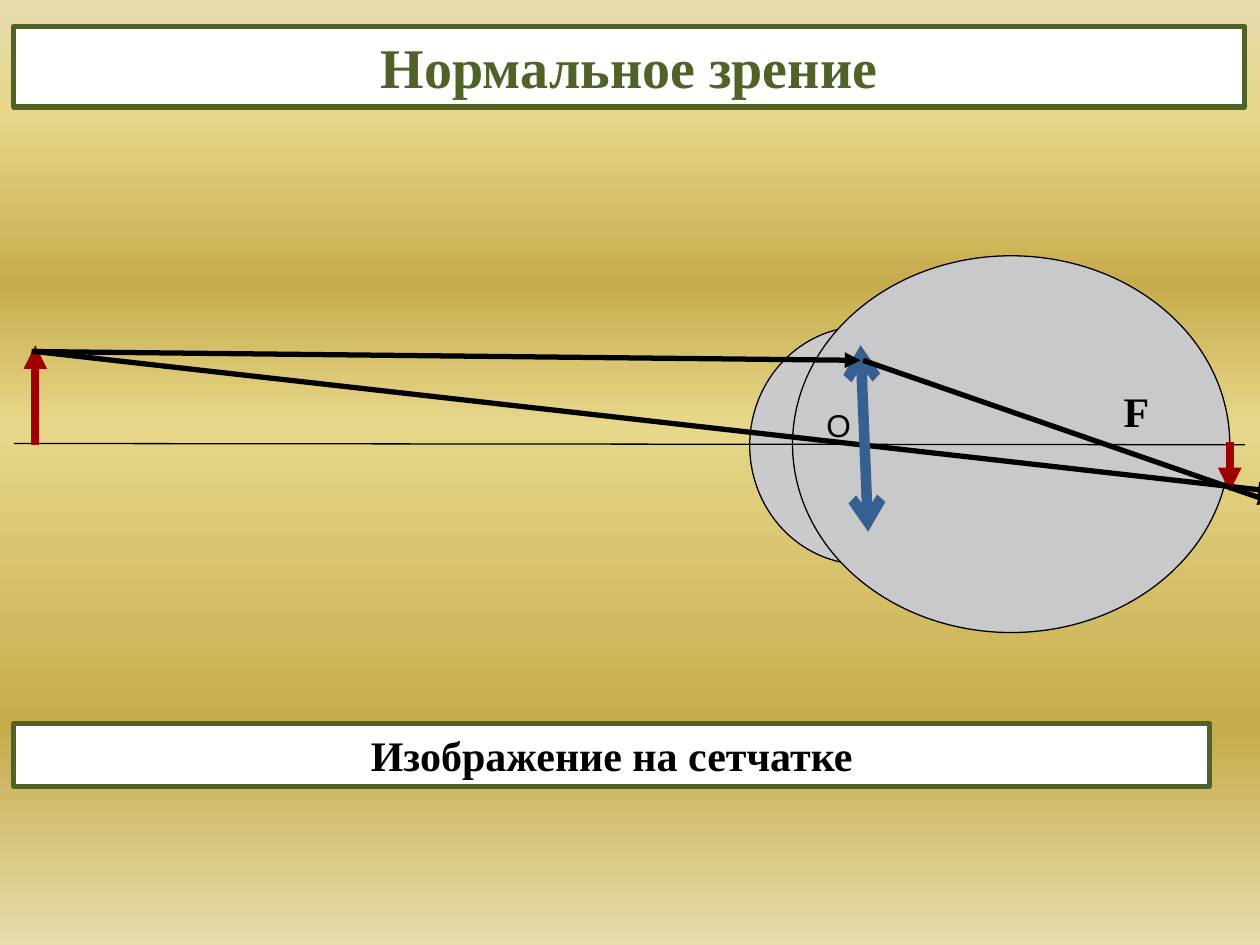
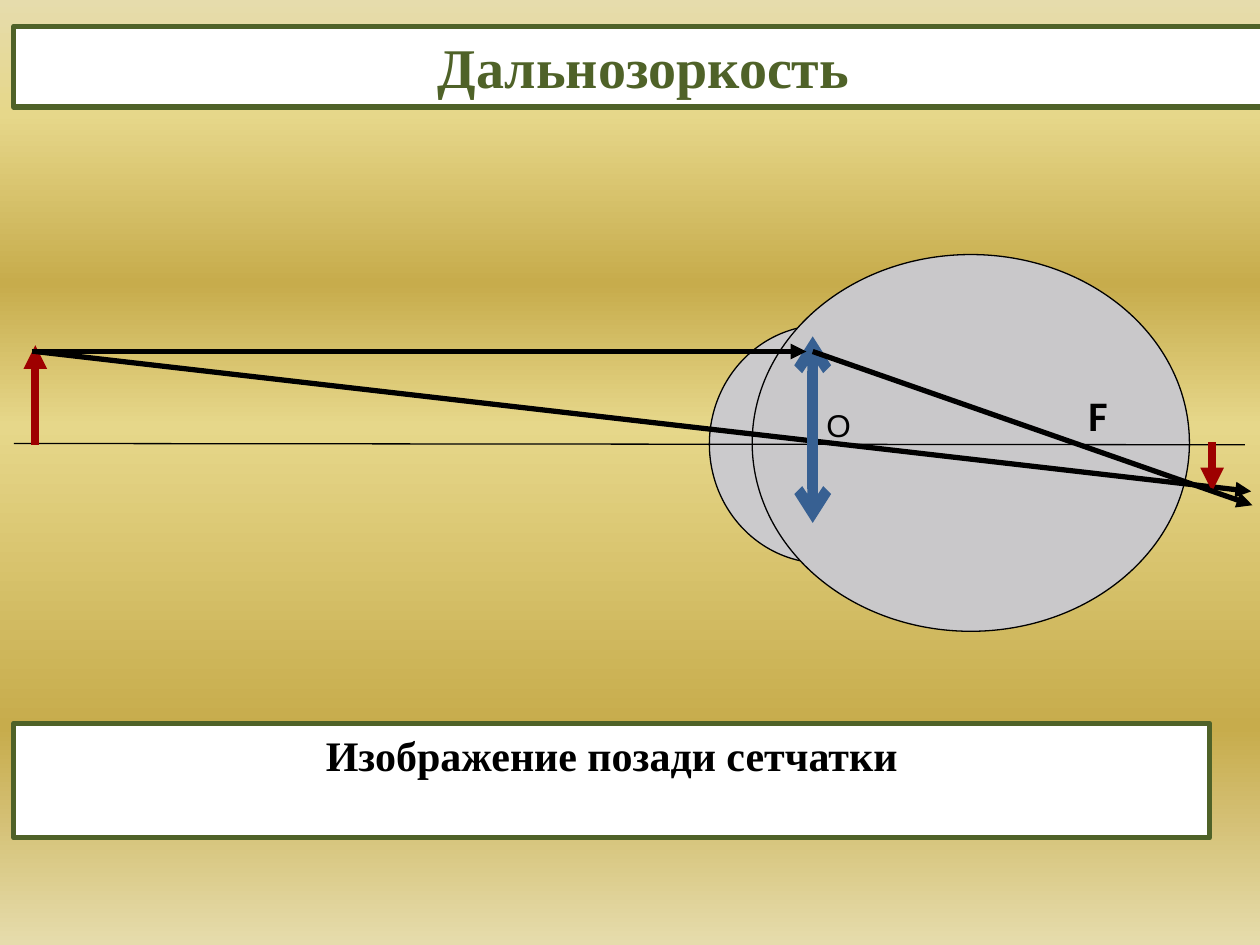
from pptx import Presentation
from pptx.util import Inches, Pt
from pptx.dml.color import RGBColor
from pptx.enum.shapes import MSO_CONNECTOR, MSO_SHAPE
from pptx.enum.text import MSO_ANCHOR, PP_ALIGN
from pptx.oxml import parse_xml
from pptx.oxml.ns import nsdecls
from lxml.etree import SubElement

COLORS = {
    "sand": "E6DCAC", "straw": "E6D78A", "gold": "C7AC4C",
    "cornea": "CBCACC", "globe": "C9C8CA", "white": "FFFFFF",
    "green": "4F6228", "black": "000000", "red": "9E0000", "blue": "376092",
}
STOPS = [(0, "sand"), (12, "straw"), (30, "gold"),
         (45, "straw"), (77, "gold"), (100, "sand")]
SERIF = "Times New Roman"
AXIS = (0.11, 3.52, 9.77, 0.01)

# Points in the views are measured from the left end of the axis
VIEWS = [
    dict(title="Нормальное зрение", note="Изображение на сетчатке",
         width=9.77, depth=0.5, eye=(5.84, -1.49), image=9.65,
         lens=((6.72, -0.78), (6.78, 0.7)), hit=(6.72, -0.66),
         bend=(6.74, -0.66), ends=((10, 0.38), (10, 0.47)),
         focus=(8.71, -0.51), font=SERIF),
    dict(title="Дальнозоркость", note="Изображение позади сетчатки",
         width=10, depth=0.91, eye=(5.52, -1.5), image=9.51,
         lens=((6.34, -0.85), (6.34, 0.63)), hit=(6.29, -0.73),
         bend=(6.34, -0.73), ends=((9.82, 0.38), (9.83, 0.49)),
         focus=(8.43, -0.48), font="Calibri"),
]


def color(name):
    return RGBColor.from_string(COLORS[name])


def write(frame, text, size=24, font=SERIF, tint="black", bold=True,
          align=PP_ALIGN.LEFT):
    frame.word_wrap = True
    frame.vertical_anchor = MSO_ANCHOR.TOP
    par = frame.paragraphs[0]
    par.alignment = align
    run = par.add_run()
    run.text = text
    run.font.size = Pt(size)
    run.font.name = font
    run.font.bold = bold
    run.font.color.rgb = color(tint)


def shape(slide, kind, box, fill, line, width):
    item = slide.shapes.add_shape(kind, *map(Inches, box))
    item.shadow.inherit = False
    item.fill.solid()
    item.fill.fore_color.rgb = color(fill)
    item.line.color.rgb = color(line)
    item.line.width = Pt(width)
    return item


def panel(slide, box, text, **style):
    item = shape(slide, MSO_SHAPE.RECTANGLE, box, "white", "green", 3)
    write(item.text_frame, text, align=PP_ALIGN.CENTER, **style)


def label(slide, box, text, **style):
    item = slide.shapes.add_textbox(*map(Inches, box))
    write(item.text_frame, text, **style)


def line(slide, start, end, tint="black", width=3.0, head=None, tail=None):
    item = slide.shapes.add_connector(
        MSO_CONNECTOR.STRAIGHT, *map(Inches, (*start, *end)))
    item.line.color.rgb = color(tint)
    item.line.width = Pt(width)
    pen = item.line._get_or_add_ln()
    space = pen.nsmap["a"]
    for tag, kind in (("headEnd", head), ("tailEnd", tail)):
        if kind:
            SubElement(pen, f"{{{space}}}{tag}", type=kind)
    SubElement(pen.getparent(), f"{{{space}}}effectLst")


def backdrop(slide):
    stops = "".join(
        f'<a:gs pos="{pos * 1000}"><a:srgbClr val="{COLORS[name]}"/></a:gs>'
        for pos, name in STOPS)
    fill = slide.background.fill
    fill.gradient()
    old = slide._element.cSld.bg.bgPr[0]
    old.getparent().replace(old, parse_xml(
        f'<a:gradFill {nsdecls("a")} rotWithShape="1"><a:gsLst>{stops}</a:gsLst>'
        '<a:lin ang="5400000" scaled="0"/></a:gradFill>'))


def eye(slide, left, top):
    oval = MSO_SHAPE.OVAL
    shape(slide, oval, (left, top + 0.56, 1.81, 1.89), "cornea", "black", 0.75)
    shape(slide, oval, (left + 0.34, top, 3.47, 2.99), "globe", "black", 0.75)


def optics(slide, box, view):
    left, top, width, drop = box

    def at(spot):
        return left + spot[0], top + spot[1]

    eye(slide, *at(view["eye"]))
    line(slide, at((0, 0)), at((width, drop)), width=0.75)

    # Object, central ray and image
    line(slide, at((0.17, 0.01)), at((0.17, -0.78)), "red", 4.5, tail="triangle")
    line(slide, at((0.17, -0.73)), at(view["ends"][0]), tail="triangle")
    line(slide, at((view["image"], -0.01)), at((view["image"], 0.38)),
         "red", 4.5, tail="triangle")

    # Lens and the ray it bends
    label(slide, (*at((6.35, -0.35)), 0.39, 0.4), "О",
          size=18, font="Arial", bold=False)
    line(slide, *map(at, view["lens"]), "blue", 6, head="arrow", tail="arrow")
    line(slide, at((0.14, -0.73)), at(view["hit"]), tail="triangle")
    line(slide, at(view["bend"]), at(view["ends"][1]), tail="triangle")
    label(slide, (*at(view["focus"]), 0.39, 0.5), "F", font=view["font"])


def build(deck, view):
    slide = deck.slides.add_slide(deck.slide_layouts[6])
    backdrop(slide)
    optics(slide, AXIS, view)
    panel(slide, (0.11, 5.74, 9.49, view["depth"]), view["note"])
    panel(slide, (0.11, 0.21, view["width"], 0.64), view["title"],
          size=32, tint="green")


def main():
    deck = Presentation()
    deck.slide_width = Inches(10)
    deck.slide_height = Inches(7.5)
    for view in VIEWS:
        build(deck, view)
    deck.save("out.pptx")


if __name__ == "__main__":
    main()
